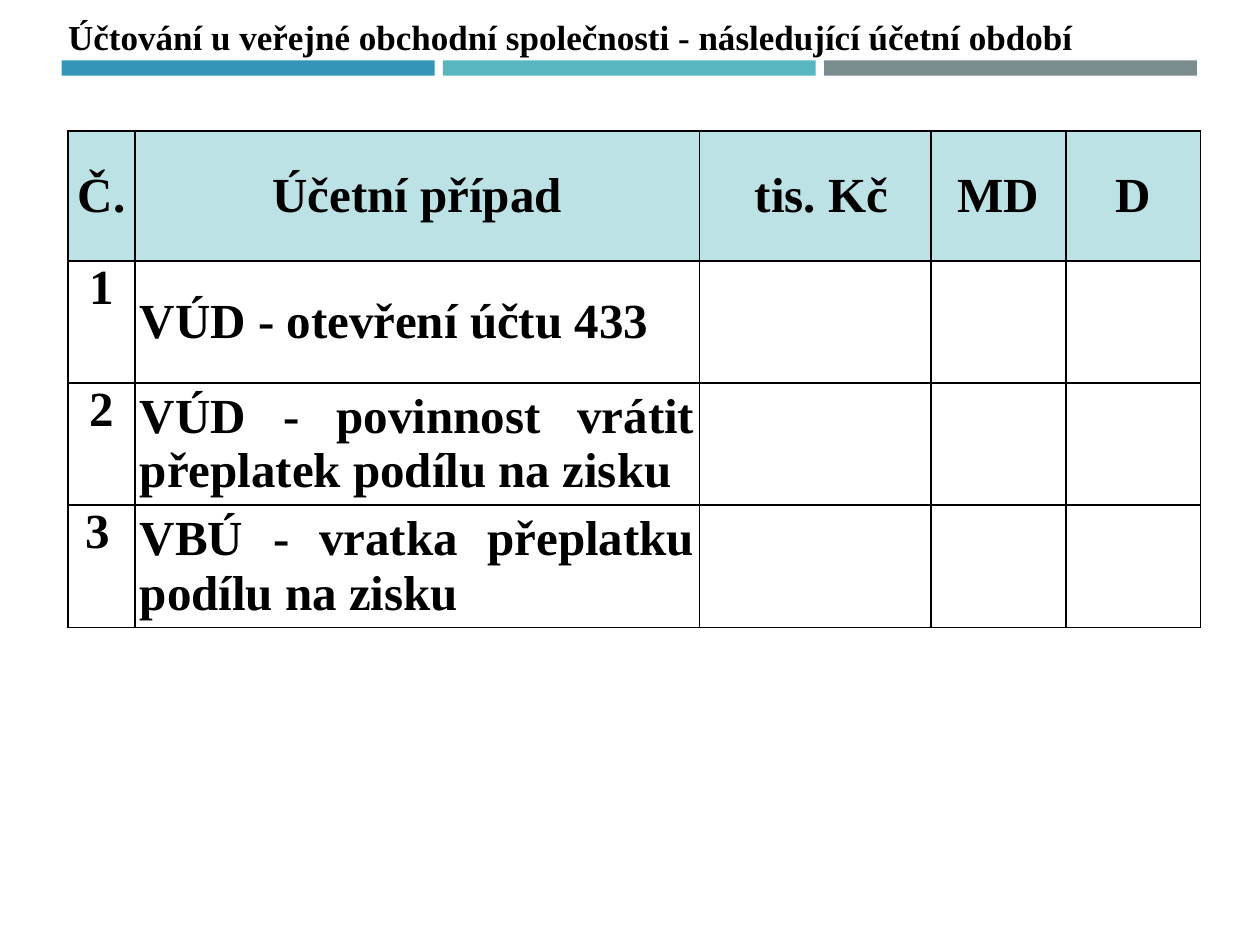
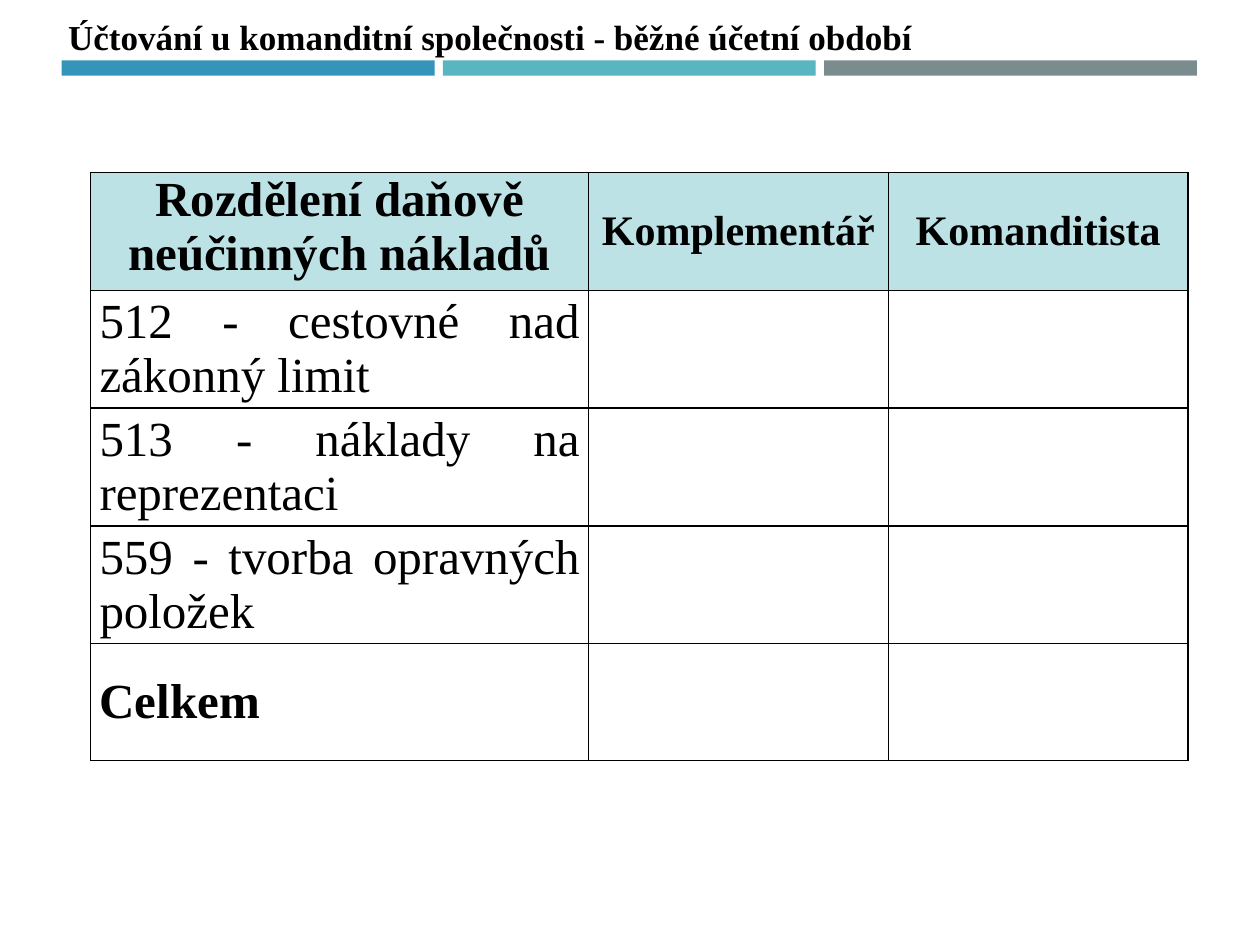
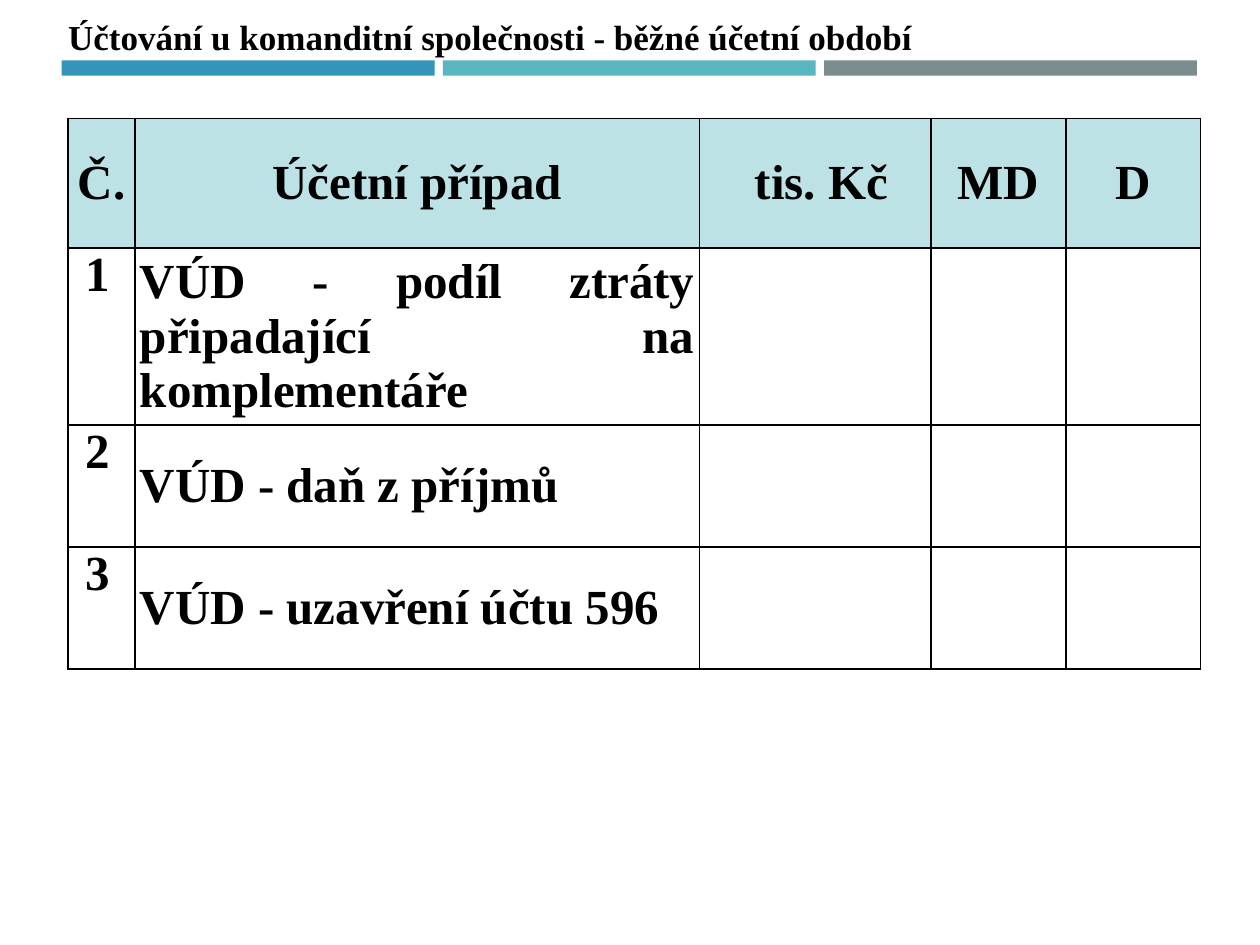
"""Build three accounting slides with tables for general and limited partnerships."""
from dataclasses import dataclass

from lxml import etree
from pptx import Presentation
from pptx.dml.color import RGBColor
from pptx.enum.shapes import MSO_SHAPE
from pptx.enum.text import MSO_ANCHOR, MSO_AUTO_SIZE, PP_ALIGN
from pptx.oxml.ns import qn
from pptx.util import Inches, Pt

RECT = MSO_SHAPE.RECTANGLE
TOP, MIDDLE = MSO_ANCHOR.TOP, MSO_ANCHOR.MIDDLE
LEFT, CENTER, JUSTIFY = PP_ALIGN.LEFT, PP_ALIGN.CENTER, PP_ALIGN.JUSTIFY
FIT_SHAPE = MSO_AUTO_SIZE.SHAPE_TO_FIT_TEXT

FONT = "Times New Roman"
COLORS = {
    "text": "000000",
    "background": "FFFFFF",
    "header": "BCE2E6",
    "blue": "3494BA",
    "teal": "58B6C0",
    "gray": "7A8C8E",
}
BANDS = ("blue", "teal", "gray")
BAND_LEFT, BAND_TOP, BAND_WIDTH, BAND_HEIGHT, BAND_STEP = 0.49, 0.48, 2.96, 0.12, 3.025
BORDER_SIDES = ("lnL", "lnR", "lnT", "lnB")


@dataclass(frozen=True)
class Cell:
    """Text of one table cell and how it is set."""
    text: str
    align: PP_ALIGN = JUSTIFY
    anchor: MSO_ANCHOR = MIDDLE
    size: int = 28
    bold: bool = True


@dataclass(frozen=True)
class Grid:
    """A table with its place, its measures and its cells."""
    left: float
    top: float
    cols: tuple[float, ...]
    rows: tuple[float, ...]
    inset: float
    cells: tuple[tuple[Cell, ...], ...]


@dataclass(frozen=True)
class Page:
    """A slide title with the table below it."""
    title: str
    title_width: float
    grid: Grid


def rgb(name: str) -> RGBColor:
    """Return a palette colour."""
    return RGBColor.from_string(COLORS[name])


def format_runs(p, size: int, bold: bool) -> None:
    """Apply the shared typeface to every run of a paragraph."""
    for r in p.runs:
        r.font.name = FONT
        r.font.size = Pt(size)
        r.font.bold = bold
        r.font.color.rgb = rgb("text")


def add_title(s, page: Page) -> None:
    """Place and format the title placeholder."""
    sp = s.shapes.title
    sp.left, sp.top = Inches(0.44), Inches(0.07)
    sp.width, sp.height = Inches(page.title_width), Inches(0.44)
    tf = sp.text_frame
    tf.text = page.title
    tf.word_wrap = False
    tf.auto_size = FIT_SHAPE
    tf.vertical_anchor = TOP
    p = tf.paragraphs[0]
    p.alignment = LEFT
    format_runs(p, 20, True)


def add_bands(s) -> None:
    """Draw the three coloured bands under the title."""
    for i, color in enumerate(BANDS):
        sp = s.shapes.add_shape(
            RECT, Inches(BAND_LEFT + i * BAND_STEP), Inches(BAND_TOP),
            Inches(BAND_WIDTH), Inches(BAND_HEIGHT))
        sp.shadow.inherit = False
        sp.fill.solid()
        sp.fill.fore_color.rgb = rgb(color)
        sp.line.fill.background()


def add_borders(cell) -> None:
    """Give a cell a thin line on each side."""
    tc_pr = cell._tc.get_or_add_tcPr()
    for side in BORDER_SIDES:
        ln = etree.SubElement(tc_pr, qn(f"a:{side}"), w=str(Pt(1)))
        fill = etree.SubElement(ln, qn("a:solidFill"))
        etree.SubElement(fill, qn("a:srgbClr"), val=COLORS["text"])


def fill_cell(cell, item: Cell, inset: float) -> None:
    """Write and format the text of a cell."""
    cell.margin_left = cell.margin_right = Inches(inset)
    cell.margin_top = cell.margin_bottom = 0
    cell.vertical_anchor = item.anchor
    p = cell.text_frame.paragraphs[0]
    p.text = item.text
    p.alignment = item.align
    format_runs(p, item.size, item.bold)


def add_grid(s, grid: Grid) -> None:
    """Draw a table with a tinted header row."""
    table = s.shapes.add_table(
        len(grid.rows), len(grid.cols), Inches(grid.left), Inches(grid.top),
        Inches(sum(grid.cols)), Inches(sum(grid.rows))).table
    table.first_row = table.horz_banding = False
    for column, width in zip(table.columns, grid.cols):
        column.width = Inches(width)
    for i, (row, height) in enumerate(zip(table.rows, grid.rows)):
        row.height = Inches(height)
        for cell in row.cells:
            add_borders(cell)
            if i == 0:
                cell.fill.solid()
                cell.fill.fore_color.rgb = rgb("header")
            else:
                cell.fill.background()
        for cell, item in zip(row.cells, grid.cells[i]):
            fill_cell(cell, item, grid.inset)


def journal(top: float, rows: tuple[float, ...], entries: tuple[tuple[Cell, str], ...]) -> Grid:
    """Describe a table of numbered accounting entries."""
    header = tuple(Cell(text, CENTER) for text in ("Č.", "Účetní případ", " tis. Kč", "MD", "D"))
    body = tuple((number, Cell(text)) for number, text in entries)
    return Grid(0.54, top, (0.53, 4.48, 1.84, 1.07, 1.07), rows, 0.04, (header, *body))


def centered(number: str) -> Cell:
    """Describe a centred entry number."""
    return Cell(number, CENTER, TOP)


def spaced(number: str) -> Cell:
    """Describe an entry number set left after a fixed space."""
    return Cell(f" {number}", LEFT, TOP)


LIMITED_TITLE = "Účtování u komanditní společnosti - běžné účetní období"
COST_GRID = Grid(0.72, 1.37, (3.95, 2.38, 2.38), (0.93,) * 5, 0.07, (
    (Cell("Rozdělení daňově neúčinných nákladů", CENTER, TOP),
     Cell("Komplementář", CENTER, size=24),
     Cell("Komanditista", CENTER, size=24)),
    (Cell("512 - cestovné nad zákonný limit", bold=False),),
    (Cell("513 - náklady na reprezentaci", bold=False),),
    (Cell("559 - tvorba opravných položek", bold=False),),
    (Cell("Celkem"),),
))
PAGES = (
    Page("Účtování u veřejné obchodní společnosti - následující účetní období", 8.23,
         journal(1.04, (1.03, 0.97, 0.97, 0.97), (
             (centered("1"), "VÚD - otevření účtu 433"),
             (centered("2"), "VÚD - povinnost vrátit přeplatek podílu na zisku"),
             (spaced("3"), "VBÚ - vratka přeplatku podílu na zisku")))),
    Page(LIMITED_TITLE, 6.95, COST_GRID),
    Page(LIMITED_TITLE, 6.95,
         journal(0.94, (1.03, 1.4, 0.97, 0.97), (
             (spaced("1"), "VÚD - podíl ztráty připadající na komplementáře"),
             (spaced("2"), "VÚD - daň z příjmů"),
             (spaced("3"), "VÚD - uzavření účtu 596")))),
)


def main() -> None:
    """Build and save the presentation."""
    prs = Presentation()
    prs.slide_width, prs.slide_height = Inches(10), Inches(7.5)
    layout = prs.slide_layouts.get_by_name("Title Only")
    for page in PAGES:
        s = prs.slides.add_slide(layout)
        s.background.fill.solid()
        s.background.fill.fore_color.rgb = rgb("background")
        add_bands(s)
        add_title(s, page)
        add_grid(s, page.grid)
    prs.save("out.pptx")


if __name__ == "__main__":
    main()
